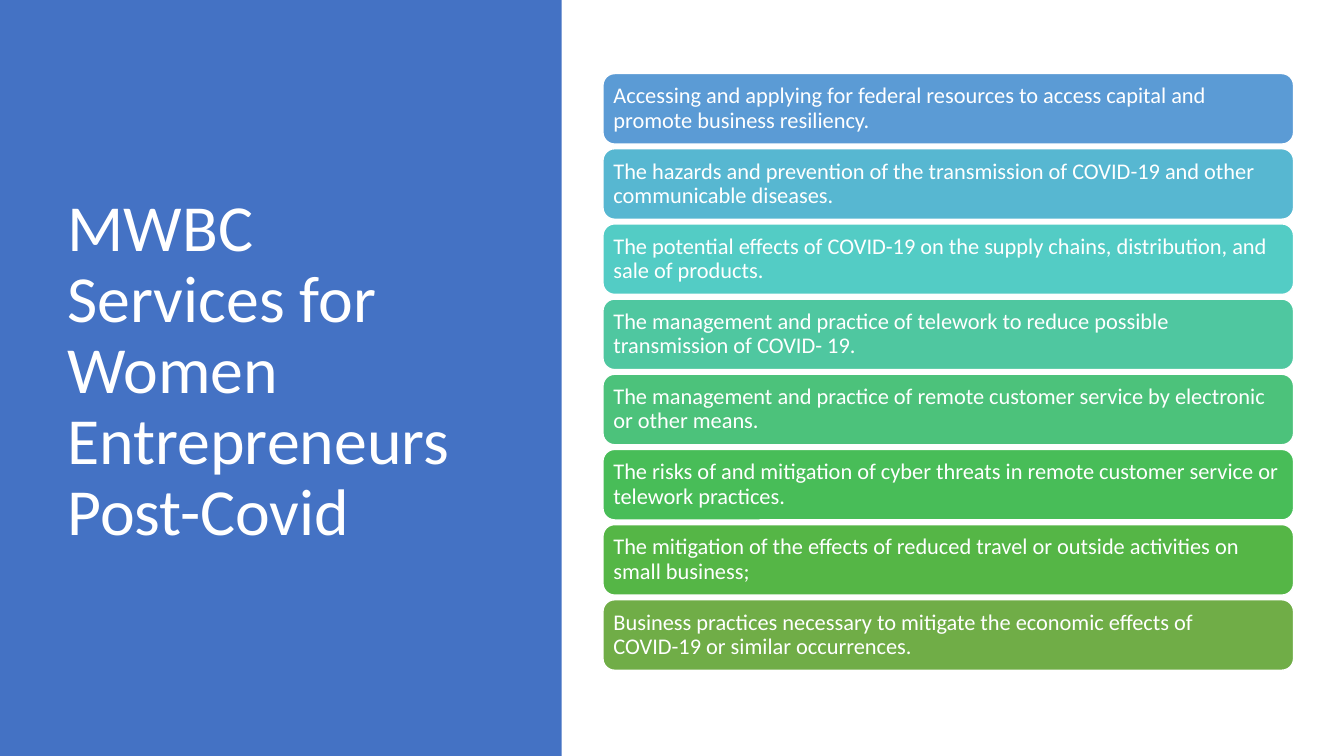
import pptx
import pptx.dml.color
import pptx.enum.shapes
import pptx.enum.text
import pptx.util

TITLE = "MWBC Services for Women Entrepreneurs Post-Covid"
SERVICES = [
    ("5B9BD5", "Accessing and applying for federal resources to access capital and promote business resiliency."),
    ("57B7D1", "The hazards and prevention of the transmission of COVID-19 and other communicable diseases."),
    ("53CCC5", "The potential effects of COVID-19 on the supply chains, distribution, and sale of products."),
    ("4FC7A0", "The management and practice of telework to reduce possible transmission of COVID- 19."),
    ("4CC27B", "The management and practice of remote customer service by electronic or other means."),
    ("48BD58", "The risks of and mitigation of cyber threats in remote customer service or telework practices."),
    ("55B646", "The mitigation of the effects of reduced travel or outside activities on small business;"),
    ("70AD47", "Business practices necessary to mitigate the economic effects of COVID-19 or similar occurrences."),
]
WHITE, PANEL_BLUE = "FFFFFF", "4472C4"
FONT = "Calibri"

# Layout in inches
SLIDE_W, SLIDE_H = 13.33, 7.5
PANEL_W = 5.57
TITLE_BOX = (0.57, 0.68, 4.16, 6.02)
BAR_LEFT, BAR_W, BAR_H = 5.98, 6.85, 0.7
LIST_TOP, LAST_TOP = 0.73, 5.95
ROW_STEP = (LAST_TOP - LIST_TOP) / (len(SERVICES) - 1)
BAR_INSET = 0.07

inch = pptx.util.Inches


def color(value):
    return pptx.dml.color.RGBColor.from_string(value)


def add_block(s, kind, box, fill):
    sp = s.shapes.add_shape(kind, *map(inch, box))
    sp.shadow.inherit = False
    sp.fill.solid()
    sp.fill.fore_color.rgb = color(fill)
    sp.line.fill.background()
    return sp


def set_text(sp, text, size):
    tf = sp.text_frame
    tf.text = text
    tf.word_wrap = True
    tf.auto_size = pptx.enum.text.MSO_AUTO_SIZE.NONE
    tf.vertical_anchor = pptx.enum.text.MSO_ANCHOR.MIDDLE
    p = tf.paragraphs[0]
    p.alignment = pptx.enum.text.PP_ALIGN.LEFT
    p.line_spacing = 0.9
    r = p.runs[0]
    r.font.name = FONT
    r.font.size = pptx.util.Pt(size)
    r.font.color.rgb = color(WHITE)
    return tf


prs = pptx.Presentation()
prs.slide_width, prs.slide_height = inch(SLIDE_W), inch(SLIDE_H)
s = prs.slides.add_slide(prs.slide_layouts[5])
shape_kinds = pptx.enum.shapes.MSO_SHAPE

# Side panel, sent behind the title
panel = add_block(s, shape_kinds.RECTANGLE, (0, 0, PANEL_W, SLIDE_H), PANEL_BLUE)
title = s.shapes.title
title._element.addprevious(panel._element)

# Title
title.left, title.top, title.width, title.height = map(inch, TITLE_BOX)
set_text(title, TITLE, 47)

# Service bars
for row, (fill, text) in enumerate(SERVICES):
    box = (BAR_LEFT, LIST_TOP + row * ROW_STEP, BAR_W, BAR_H)
    bar = add_block(s, shape_kinds.ROUNDED_RECTANGLE, box, fill)
    bar.line.color.rgb = color(WHITE)
    bar.line.width = pptx.util.Pt(1)
    tf = set_text(bar, text, 16)
    tf.margin_left = tf.margin_right = inch(BAR_INSET)
    tf.margin_top = tf.margin_bottom = inch(BAR_INSET)

prs.save("out.pptx")
